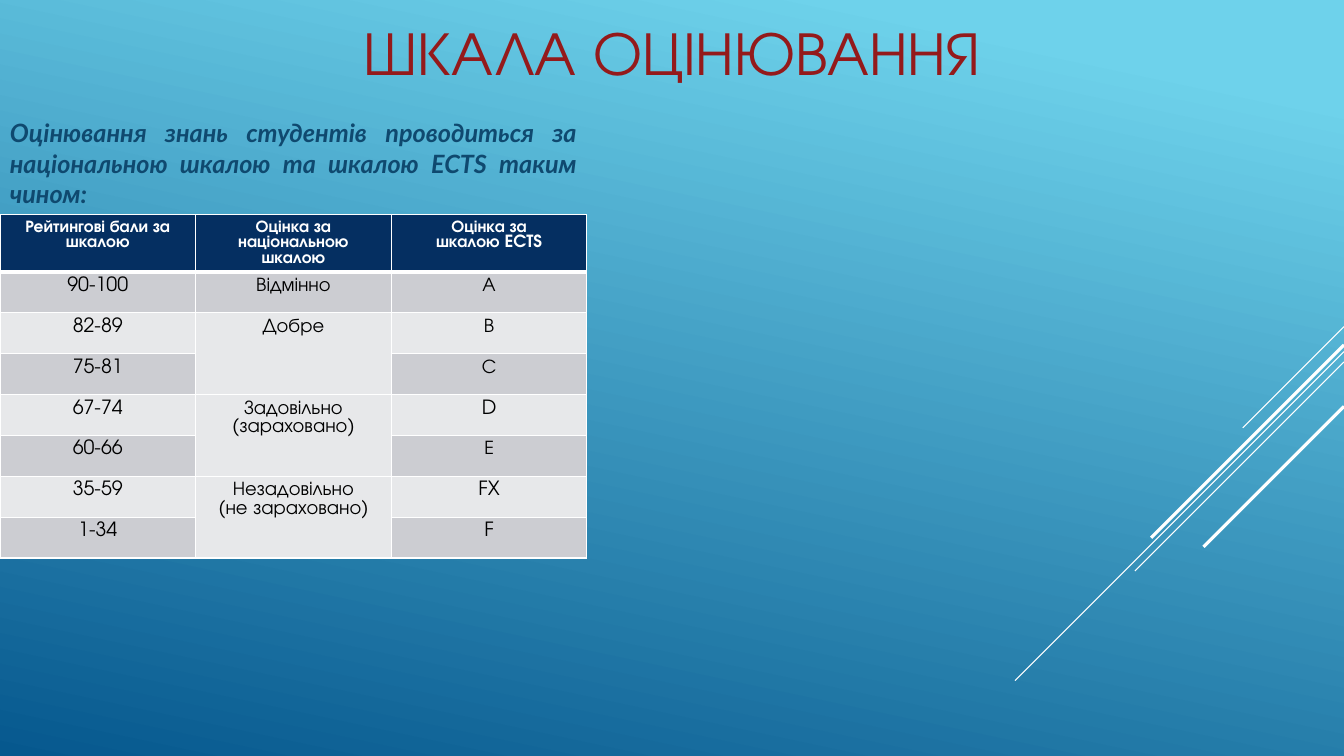
"""Build a slide with the grading scale table."""
from lxml import etree
from pptx import Presentation
from pptx.dml.color import RGBColor
from pptx.enum.shapes import MSO_CONNECTOR
from pptx.enum.text import MSO_ANCHOR, PP_ALIGN
from pptx.oxml import parse_xml
from pptx.oxml.ns import qn
from pptx.util import Cm, Pt

STRAIGHT = MSO_CONNECTOR.STRAIGHT
MIDDLE, TOP = MSO_ANCHOR.MIDDLE, MSO_ANCHOR.TOP
CENTER, JUSTIFY = PP_ALIGN.CENTER, PP_ALIGN.JUSTIFY
DISPLAY_FONT, BODY_FONT = "TeX Gyre Adventor", "Lato"
DRAWING = "http://schemas.openxmlformats.org/drawingml/2006/main"
PAGE_WIDTH, PAGE_HEIGHT = 33.87, 19.05


def color(value):
    return RGBColor.from_string(value)


def write(frame, text, size, ink, font=DISPLAY_FONT, align=CENTER, anchor=TOP,
          bold=False, italic=False, spacing=None):
    frame.word_wrap = True
    frame.vertical_anchor = anchor
    for index, line in enumerate(text.split("\n")):
        para = frame.add_paragraph() if index else frame.paragraphs[0]
        para.alignment = align
        if spacing:
            para.line_spacing = Pt(spacing)
        span = para.add_run()
        span.text = line
        span.font.name = font
        span.font.size = Pt(size)
        span.font.bold = bold
        span.font.italic = italic
        span.font.color.rgb = color(ink)


deck = Presentation()
deck.slide_width, deck.slide_height = Cm(PAGE_WIDTH), Cm(PAGE_HEIGHT)
page = deck.slides.add_slide(deck.slide_layouts[6])

backdrop = page.background.fill
backdrop.gradient()
backdrop.gradient_angle = 258
for stop, (position, shade) in zip(backdrop.gradient_stops, [(0.1, "6ED2EB"), (1, "06588E")]):
    stop.position = position
    stop.color.rgb = color(shade)

for top, reach, weight in [(8.23, 2.55, 0.75), (8.86, 8.29, 0.75), (9.12, 5.27, 0.75),
                           (8.69, 4.86, 2.25), (10.24, 3.54, 2.25)]:
    ray = page.shapes.add_connector(STRAIGHT, Cm(PAGE_WIDTH), Cm(top),
                                    Cm(PAGE_WIDTH - reach), Cm(top + reach))
    ray.line.color.rgb = color("FFFFFF")
    ray.line.width = Pt(weight)
    etree.SubElement(ray.element.spPr, qn("a:effectLst"))

title = page.shapes.add_textbox(0, 0, Cm(PAGE_WIDTH), Cm(2.54))
write(title.text_frame, "ШКАЛА ОЦІНЮВАННЯ", size=44, ink="941A1B", anchor=MIDDLE)

GRADES = [
    ("Рейтингові бали за\nшкалою", "Оцінка за\nнаціональною шкалою", "Оцінка за\nшкалою ECTS"),
    ("90-100", "Відмінно", "А"),
    ("82-89", "Добре", "В"),
    ("75-81", "", "С"),
    ("67-74", "Задовільно\n(зараховано)", "D"),
    ("60-66", "", "Е"),
    ("35-59", "Незадовільно\n(не зараховано)", "FX"),
    ("1-34", "", "F"),
]
COLUMN_WIDTH, HEADER_HEIGHT, ROW_HEIGHT = 4.93, 1.43, 1.03
table = page.shapes.add_table(
    len(GRADES), 3, 0, Cm(5.41), Cm(3 * COLUMN_WIDTH),
    Cm(HEADER_HEIGHT + ROW_HEIGHT * (len(GRADES) - 1))).table
for column in table.columns:
    column.width = Cm(COLUMN_WIDTH)

for row, texts in enumerate(GRADES):
    header = row == 0
    table.rows[row].height = Cm(HEADER_HEIGHT if header else ROW_HEIGHT)
    fill = "052F61" if header else "CCCDD2" if row % 2 else "E7E8EA"
    for column, text in enumerate(texts):
        cell = table.cell(row, column)
        cell.fill.solid()
        cell.fill.fore_color.rgb = color(fill)
        if header:
            write(cell.text_frame, text, size=12, ink="FFFFFF", bold=True, spacing=11.2)
        elif text:
            write(cell.text_frame, text, size=14, ink="000000", spacing=13)
        else:
            table.cell(row - 1, column).merge(cell)
        for index, side in enumerate(("lnL", "lnR", "lnT", "lnB")):
            thick = (header and side == "lnB") or (row == 1 and side == "lnT")
            border = parse_xml(
                f'<a:{side} xmlns:a="{DRAWING}" w="{Pt(3 if thick else 1)}">'
                f'<a:solidFill><a:srgbClr val="FFFFFF"/></a:solidFill></a:{side}>')
            cell._tc.get_or_add_tcPr().insert(index, border)

caption = page.shapes.add_textbox(0, Cm(2.84), Cm(3 * COLUMN_WIDTH), Cm(2.57))
write(caption.text_frame,
      "Оцінювання знань студентів проводиться за національною шкалою "
      "та шкалою ECTS таким чином:",
      size=18, ink="0F496F", font=BODY_FONT, align=JUSTIFY, bold=True, italic=True)

deck.save("out.pptx")
